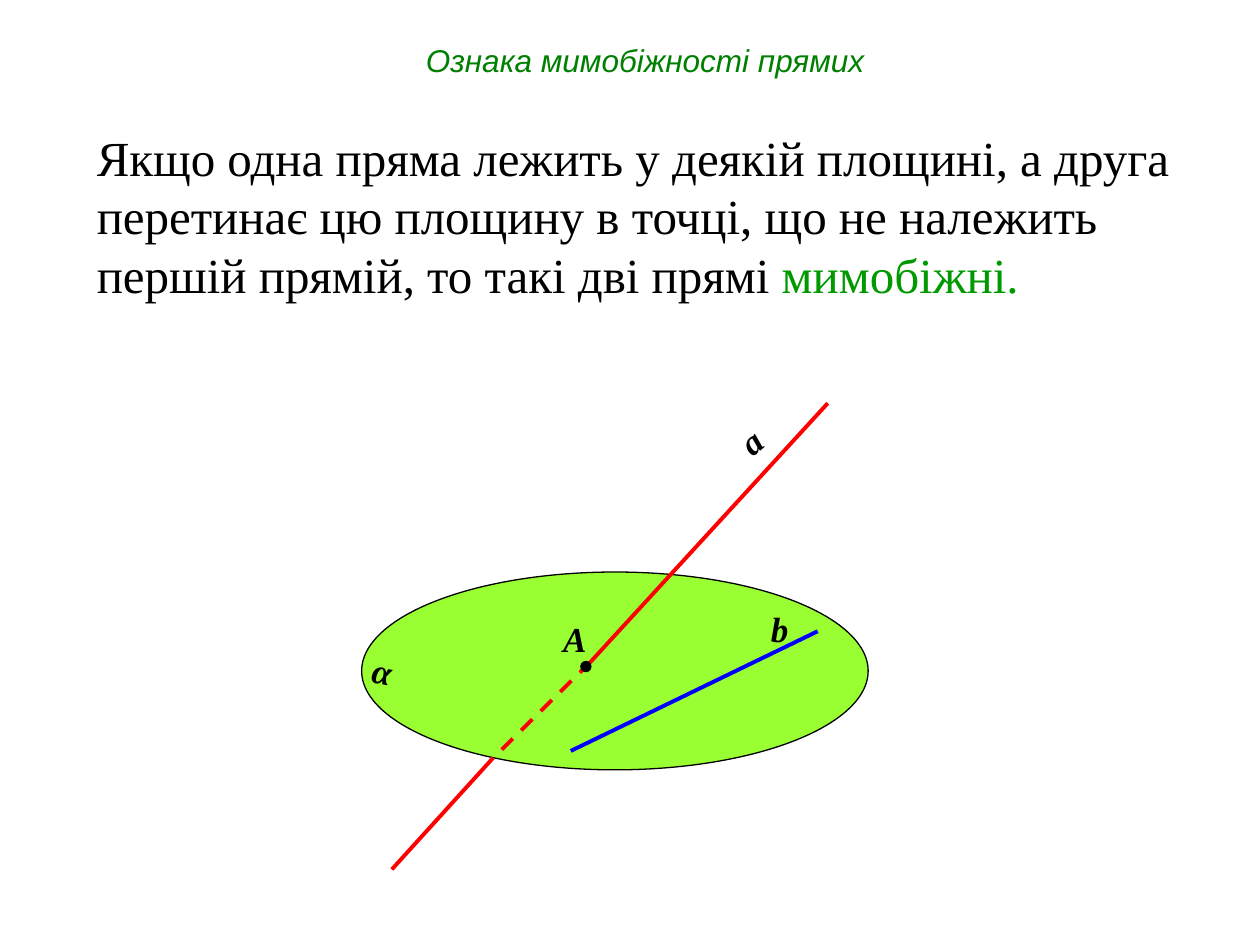
from lxml.etree import SubElement
from pptx import Presentation
from pptx.dml.color import RGBColor
from pptx.enum.dml import MSO_LINE_DASH_STYLE as Dash
from pptx.enum.shapes import MSO_CONNECTOR as Connector, MSO_SHAPE as Shape
from pptx.enum.text import MSO_AUTO_SIZE as AutoSize, PP_ALIGN as Align
from pptx.oxml.ns import qn
from pptx.util import Inches, Pt

SERIF = "Times New Roman"
BLACK, RED, BLUE = "000000", "FF0000", "0000FF"


def color(value):
    return RGBColor.from_string(value)


def add_ellipse(page, left, top, width, height, fill):
    ellipse = page.shapes.add_shape(
        Shape.OVAL, Inches(left), Inches(top), Inches(width), Inches(height))
    ellipse.shadow.inherit = False
    ellipse.fill.solid()
    ellipse.fill.fore_color.rgb = color(fill)
    ellipse.line.color.rgb = color(BLACK)
    ellipse.line.width = Pt(0.75)


def add_line(page, start, end, stroke, dash=None):
    line = page.shapes.add_connector(
        Connector.STRAIGHT, *(Inches(value) for value in start + end))
    line.line.color.rgb = color(stroke)
    line.line.width = Pt(2.25)
    if dash:
        line.line.dash_style = dash
    SubElement(line._element.spPr, qn("a:effectLst"))


def add_box(page, left, top, width, height, wrap=False, grow=True):
    box = page.shapes.add_textbox(
        Inches(left), Inches(top), Inches(width), Inches(height))
    box.text_frame.word_wrap = wrap
    box.text_frame.auto_size = AutoSize.SHAPE_TO_FIT_TEXT if grow else AutoSize.NONE
    return box


def add_span(para, text, size, fill=BLACK, font=SERIF, bold=False, italic=False):
    span = para.add_run()
    span.text = text
    span.font.name = font
    span.font.size = Pt(size)
    span.font.bold = bold
    span.font.italic = italic
    span.font.color.rgb = color(fill)
    return span


def outline_span(span, stroke):
    properties = span.font._element
    outline = SubElement(properties, qn("a:ln"), w=str(Pt(1)))
    fill = SubElement(outline, qn("a:solidFill"))
    SubElement(fill, qn("a:srgbClr"), val=stroke)
    properties.insert(0, outline)  # the schema puts the outline first


def add_label(page, text, left, top, width, rotation=0):
    box = add_box(page, left, top, width, 0.44)
    box.rotation = rotation
    add_span(box.text_frame.paragraphs[0], text, 20, bold=True, italic=True)


def add_theorem(page):
    frame = add_box(page, 0.67, 0.96, 8.9, 1.51, wrap=True).text_frame
    add_span(frame.paragraphs[0],
             "Якщо одна пряма лежить у деякій площині, а друга "
             "перетинає цю площину в точці, що не належить", 28)
    ending = frame.add_paragraph()
    add_span(ending, "першій прямій, то такі дві прямі ", 28)
    add_span(ending, "мимобіжні.", 28, "009900")


def add_title(page):
    para = add_box(page, 1.3, 0.28, 7.64, 0.45, grow=False).text_frame.paragraphs[0]
    para.alignment = Align.CENTER
    span = add_span(para, "Ознака мимобіжності прямих", 18, "008000", "Arial", italic=True)
    outline_span(span, "00FF00")


def main():
    deck = Presentation()
    deck.slide_width, deck.slide_height = Inches(10), Inches(7.5)
    page = deck.slides.add_slide(deck.slide_layouts[6])

    # Plane α
    add_ellipse(page, 2.87, 4.54, 4.02, 1.57, "99FF33")

    # Line a: hidden part under the plane, then the two visible parts
    crossing, edge = (4.69, 5.25), (3.9, 6.03)
    add_line(page, crossing, edge, RED, Dash.DASH)
    add_line(page, crossing, (6.57, 3.2), RED)
    add_line(page, edge, (3.11, 6.9), RED)

    # Point A and line b in the plane
    add_ellipse(page, 4.61, 5.25, 0.08, 0.08, BLACK)
    add_line(page, (4.53, 5.96), (6.49, 5.01), BLUE)

    # Labels
    add_label(page, "α", 2.86, 5.11, 0.37, 10.9)
    add_label(page, "а", 5.79, 3.28, 0.34, 320.3)
    add_label(page, "А", 4.37, 4.85, 0.39)
    add_label(page, "b", 6.02, 4.77, 0.34)

    # Wording
    add_theorem(page)
    add_title(page)

    deck.save("out.pptx")


if __name__ == "__main__":
    main()
